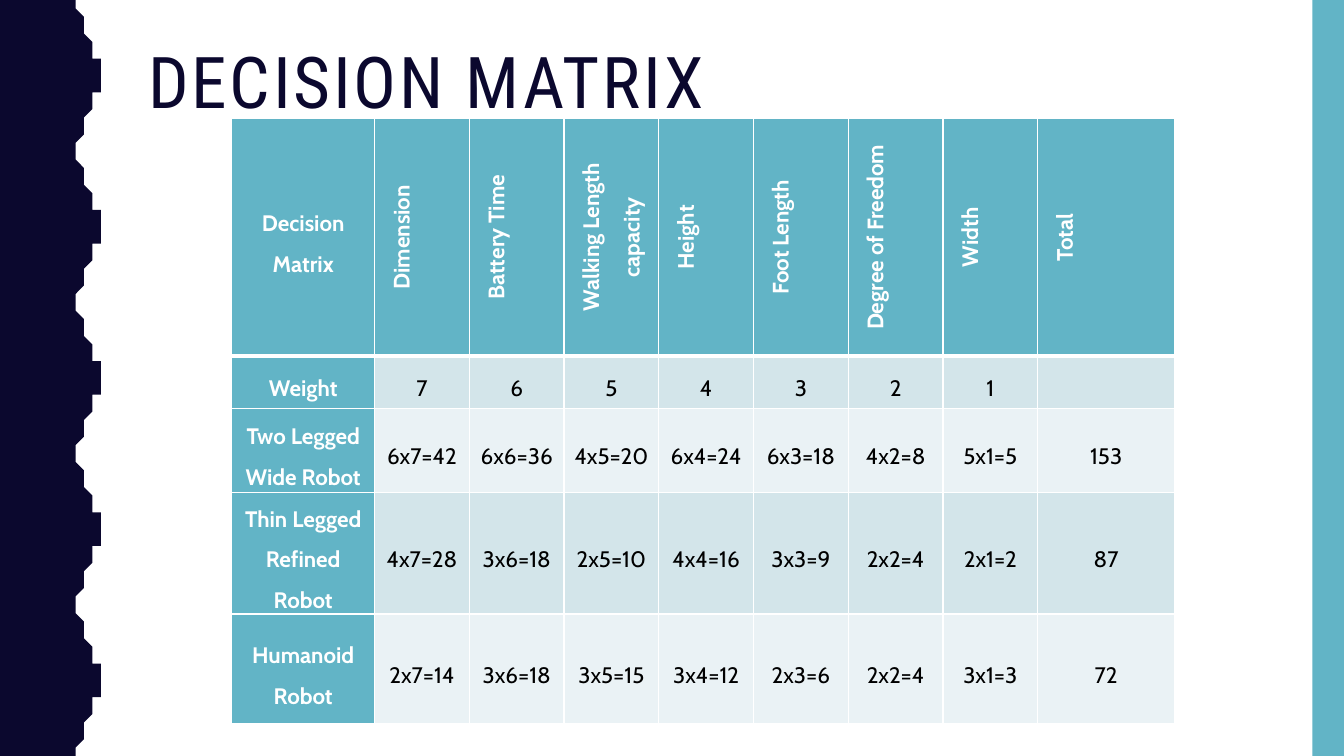
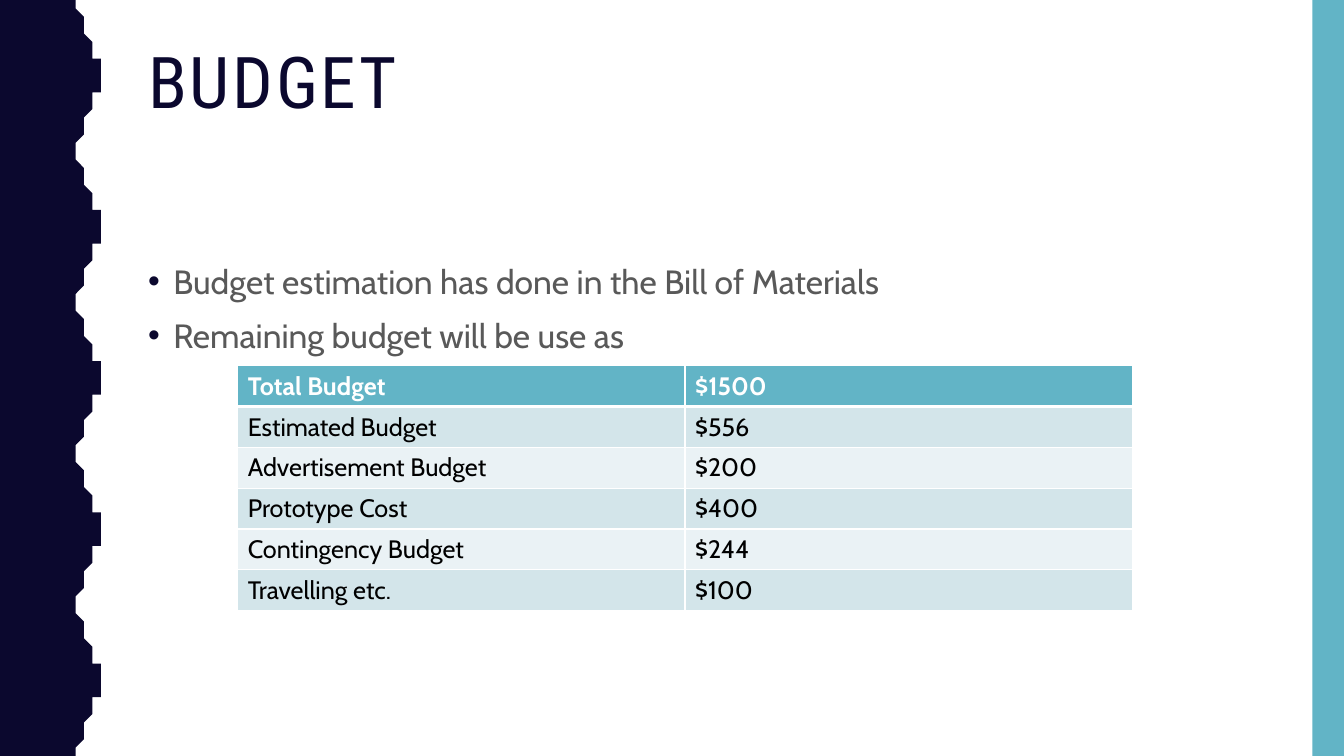
from lxml.etree import SubElement
from pptx import Presentation
from pptx.dml.color import RGBColor
from pptx.enum.shapes import MSO_SHAPE
from pptx.enum.text import MSO_ANCHOR, PP_ALIGN
from pptx.oxml.ns import qn
from pptx.util import Pt

# The grid: 160 columns by 90 rows of 6 pt squares
COLUMNS, ROWS, UNIT = 160, 90, 6

COLORS = {
    "navy": "0B082E",
    "teal": "62B4C6",
    "band_dark": "D3E5EA",
    "band_light": "EAF2F5",
    "gray": "595959",
    "white": "FFFFFF",
    "black": "000000",
}
TITLE_FONT, BODY_FONT = "Roboto Condensed", "Cabin"
LEFT, CONTENT_WIDTH = 16.45, 133.55

# A quarter of one wave on the left edge; the rest follows by symmetry
WAVE_PERIOD = 18
QUARTER_WAVE = [(9.36, 0), (9.4, 0.85), (9.5, 1.7), (9.6, 2.4),
                (9.75, 3), (9.95, 3.5), (10.2, 4), (10.5, 4.5)]


def grid(units):
    return Pt(units * UNIT)


def color(name):
    return RGBColor.from_string(COLORS[name])


def wave_outline():
    """Points of the wavy edge, from the top of the slide to the bottom."""
    half = QUARTER_WAVE + [(21 - x, 9 - y) for x, y in QUARTER_WAVE[-2::-1]]
    period = half + [(x, WAVE_PERIOD - y) for x, y in half[-2::-1]]
    return [(x, y + start) for start in range(0, ROWS, WAVE_PERIOD)
            for x, y in period]


class Deck:
    def __init__(self):
        self.prs = Presentation()
        self.prs.slide_width = grid(COLUMNS)
        self.prs.slide_height = grid(ROWS)
        self.slide = None

    def add_slide(self, heading):
        self.slide = self.prs.slides.add_slide(self.prs.slide_layouts[6])
        self.wave()
        self.side_band()
        self.title(heading)

    def paint(self, shape, name):
        shape.shadow.inherit = False
        shape.fill.solid()
        shape.fill.fore_color.rgb = color(name)
        shape.line.fill.background()

    def wave(self):
        builder = self.slide.shapes.build_freeform(0, 0, scale=grid(1))
        builder.add_line_segments(wave_outline() + [(0, ROWS)], close=True)
        self.paint(builder.convert_to_shape(), "navy")

    def side_band(self):
        width = 3.75
        band = self.slide.shapes.add_shape(
            MSO_SHAPE.RECTANGLE, grid(COLUMNS - width), 0,
            grid(width), grid(ROWS))
        self.paint(band, "teal")

    def style(self, paragraph, size, name, font=BODY_FONT, bold=False):
        for run in paragraph.runs:
            run.font.size = Pt(size)
            run.font.name = font
            run.font.bold = bold
            run.font.color.rgb = color(name)

    def text_frame(self, top, height, text):
        box = self.slide.shapes.add_textbox(
            grid(LEFT), grid(top), grid(CONTENT_WIDTH), grid(height))
        frame = box.text_frame
        frame.word_wrap = True
        frame.vertical_anchor = MSO_ANCHOR.TOP
        frame.text = text
        return frame

    def title(self, heading):
        paragraph = self.text_frame(5, 19.5, heading).paragraphs[0]
        paragraph.line_spacing = 0.9
        self.style(paragraph, 51, "navy", TITLE_FONT)
        for run in paragraph.runs:
            run.font._element.set("spc", "200")

    def bullets(self, top, height, items):
        for paragraph in self.text_frame(top, height, "\n".join(items)).paragraphs:
            paragraph.line_spacing = 1.1
            paragraph.space_before = Pt(7)
            self.style(paragraph, 24, "gray")
            props = paragraph._p.get_or_add_pPr()
            props.set("marL", str(grid(3)))
            props.set("indent", str(-grid(3)))
            bullet_color = SubElement(props, qn("a:buClr"))
            SubElement(bullet_color, qn("a:srgbClr"), val=COLORS["navy"])
            SubElement(props, qn("a:buFont"), typeface="Arial")
            SubElement(props, qn("a:buChar"), char="•")

    def borders(self, cell, row):
        """White rules, thicker below the header row."""
        widths = {"L": 1, "R": 1, "T": 3 if row == 1 else 1,
                  "B": 3 if row == 0 else 1}
        props = cell._tc.get_or_add_tcPr()
        for side, width in widths.items():
            line = SubElement(props, qn(f"a:ln{side}"), w=str(Pt(width)))
            fill = SubElement(line, qn("a:solidFill"))
            SubElement(fill, qn("a:srgbClr"), val=COLORS["white"])

    def table(self, left, top, widths, heights, rows, size, matrix=False):
        """A banded table; a matrix also has row heads and upright labels."""
        table = self.slide.shapes.add_table(
            len(heights), len(widths), grid(left), grid(top),
            grid(sum(widths)), grid(sum(heights))).table
        for column, width in zip(table.columns, widths):
            column.width = grid(width)
        for table_row, height in zip(table.rows, heights):
            table_row.height = grid(height)
        for r, values in enumerate(rows):
            for c, value in enumerate(values):
                cell = table.cell(r, c)
                head = r == 0 or (matrix and c == 0)
                band = "band_dark" if r % 2 else "band_light"
                cell.text = value
                self.borders(cell, r)
                cell.fill.solid()
                cell.fill.fore_color.rgb = color("teal" if head else band)
                paragraph = cell.text_frame.paragraphs[0]
                self.style(paragraph, size, "white" if head else "black", bold=head)
                if matrix:
                    self.center(cell, paragraph, upright=r == 0 and c > 0)

    def center(self, cell, paragraph, upright):
        cell.vertical_anchor = MSO_ANCHOR.MIDDLE
        cell.margin_left = cell.margin_right = Pt(5)
        cell.margin_top = cell.margin_bottom = 0
        paragraph.alignment = PP_ALIGN.CENTER
        paragraph.line_spacing = 1.5
        if upright:
            cell._tc.get_or_add_tcPr().set("vert", "vert270")


DECISION_ROWS = [
    ["Decision Matrix", "Dimension", "Battery Time", "Walking Length capacity",
     "Height", "Foot Length", "Degree of Freedom", "Width", "Total"],
    ["Weight", "7", "6", "5", "4", "3", "2", "1", ""],
    ["Two Legged Wide Robot", "6x7=42", "6x6=36", "4x5=20", "6x4=24",
     "6x3=18", "4x2=8", "5x1=5", "153"],
    ["Thin Legged Refined Robot", "4x7=28", "3x6=18", "2x5=10", "4x4=16",
     "3x3=9", "2x2=4", "2x1=2", "87"],
    ["Humanoid Robot", "2x7=14", "3x6=18", "3x5=15", "3x4=12",
     "2x3=6", "2x2=4", "3x1=3", "72"],
]
BUDGET_ROWS = [
    ["Total Budget", "$1500"],
    ["Estimated Budget", "$556"],
    ["Advertisement Budget", "$200"],
    ["Prototype Cost", "$400"],
    ["Contingency Budget", "$244"],
    ["Travelling etc.", "$100"],
]


def main():
    deck = Deck()

    # Decision matrix
    deck.add_slide("DECISION MATRIX")
    deck.table(27.6, 14.1, [17] + [11.28] * 7 + [16.3],
               [28.3, 6.2, 10, 14.5, 13.1], DECISION_ROWS, 16, matrix=True)

    # Budget
    deck.add_slide("BUDGET")
    deck.bullets(30, 47.15, ["Budget estimation has done in the Bill of Materials",
                             "Remaining budget will be use as"])
    deck.table(28.3, 43.55, [53.25] * 2, [4.86] * len(BUDGET_ROWS),
               BUDGET_ROWS, 18)

    deck.prs.save("out.pptx")


if __name__ == "__main__":
    main()
